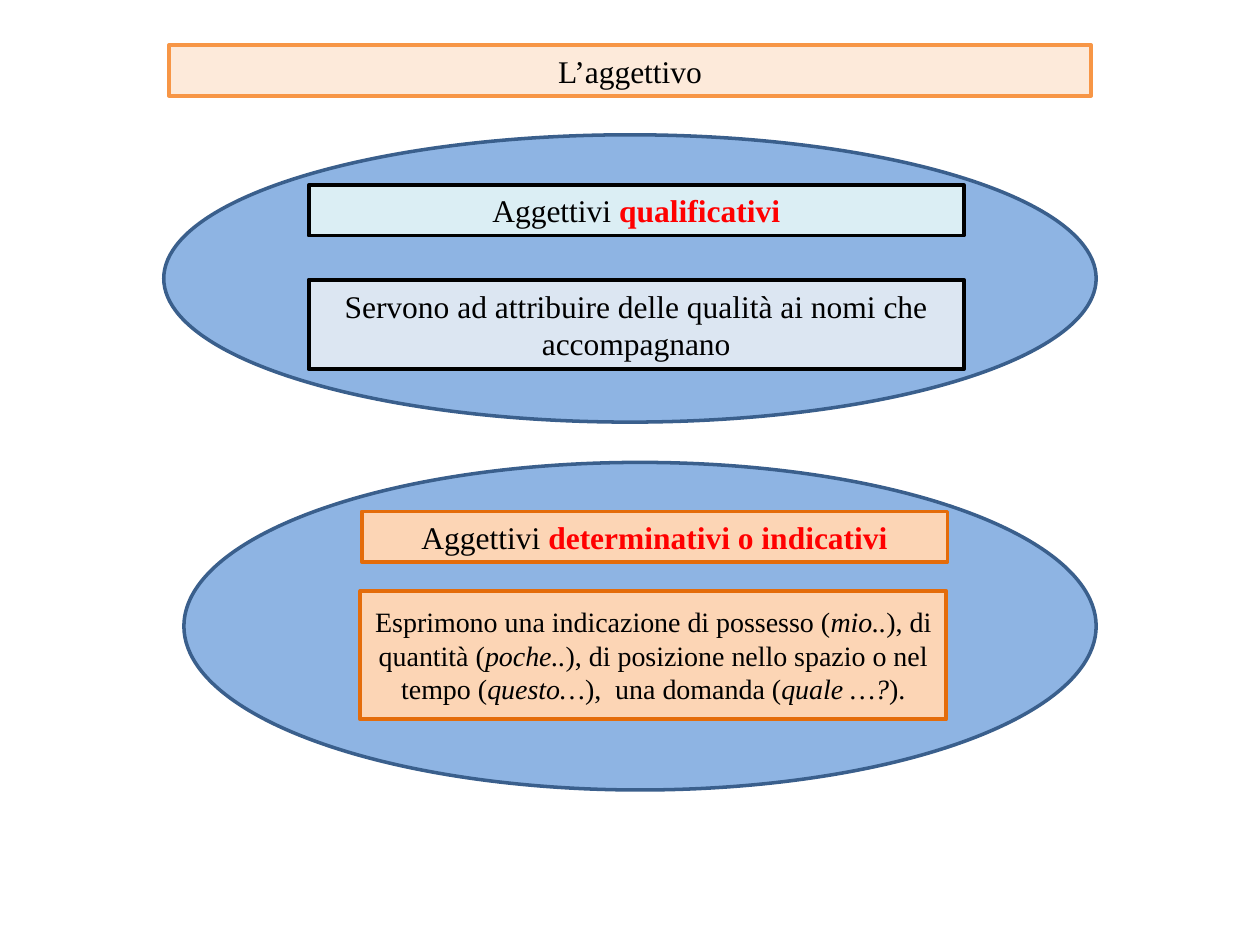
import pptx
import pptx.dml.color
import pptx.enum.shapes
import pptx.enum.text
import pptx.util

RGBColor = pptx.dml.color.RGBColor
SHAPE = pptx.enum.shapes.MSO_SHAPE

BLACK = RGBColor(0x00, 0x00, 0x00)
RED = RGBColor(0xFF, 0x00, 0x00)
BLUE = RGBColor(0x8E, 0xB4, 0xE3)
DARK_BLUE = RGBColor(0x3A, 0x5F, 0x8C)
PALE_BLUE = RGBColor(0xDC, 0xE6, 0xF2)
PALE_AQUA = RGBColor(0xDB, 0xEE, 0xF4)
CREAM = RGBColor(0xFD, 0xEA, 0xDA)
PEACH = RGBColor(0xFC, 0xD5, 0xB5)
ORANGE = RGBColor(0xF7, 0x96, 0x46)
DARK_ORANGE = RGBColor(0xE4, 0x6C, 0x0A)

FONT = "Times New Roman"
COLS, ROWS = 100, 75
PLAIN, KEY, EXAMPLE = "plain", "key", "example"


def add_figure(prs, s, kind, box, fill, line, width):
    """Draw a filled, outlined shape in a box of grid columns and rows."""
    col, row = prs.slide_width / COLS, prs.slide_height / ROWS
    x, y, w, h = box
    sp = s.shapes.add_shape(kind, round(x * col), round(y * row),
                            round(w * col), round(h * row))
    sp.shadow.inherit = False
    sp.fill.solid()
    sp.fill.fore_color.rgb = fill
    sp.line.color.rgb = line
    sp.line.width = pptx.util.Pt(width)
    return sp


def add_label(prs, s, box, fill, line, runs, size=18):
    """Draw a rectangle with centred text made of (text, style) runs."""
    sp = add_figure(prs, s, SHAPE.RECTANGLE, box, fill, line, 2.25)
    tf = sp.text_frame
    tf.word_wrap = True
    tf.vertical_anchor = pptx.enum.text.MSO_ANCHOR.MIDDLE
    p = tf.paragraphs[0]
    p.alignment = pptx.enum.text.PP_ALIGN.CENTER
    for text, style in runs:
        r = p.add_run()
        r.text = text
        r.font.name = FONT
        r.font.size = pptx.util.Pt(size)
        r.font.bold = style == KEY
        r.font.italic = style == EXAMPLE
        r.font.color.rgb = RED if style == KEY else BLACK


def add_group(prs, s, box, line, heading, body):
    """Draw an ellipse with a heading and a body label offset from its corner."""
    add_figure(prs, s, SHAPE.OVAL, box, BLUE, DARK_BLUE, 2)
    for (dx, dy, w, h), fill, runs, size in (heading, body):
        add_label(prs, s, (box[0] + dx, box[1] + dy, w, h), fill, line, runs, size)


def main():
    """Build the slide and save it."""
    prs = pptx.Presentation()
    prs.slide_width = pptx.util.Inches(10)
    prs.slide_height = pptx.util.Inches(7.5)
    s = prs.slides.add_slide(prs.slide_layouts[6])

    add_label(prs, s, (13.4, 3.6, 73.2, 4), CREAM, ORANGE, [("L’aggettivo", PLAIN)])
    add_group(
        prs, s, (13, 10.7, 74, 22.8), BLACK,
        ((11.5, 4, 52, 4), PALE_AQUA,
         [("Aggettivi ", PLAIN), ("qualificativi", KEY)], 18),
        ((11.5, 11.5, 52, 7.1), PALE_BLUE,
         [("Servono ad attribuire delle qualità ai nomi che accompagnano", PLAIN)], 18))
    add_group(
        prs, s, (14.6, 36.7, 72.4, 26), DARK_ORANGE,
        ((14.1, 3.9, 46.5, 4), PEACH,
         [("Aggettivi ", PLAIN), ("determinativi o indicativi", KEY)], 18),
        ((14, 10.2, 46.5, 10.2), PEACH,
         [("Esprimono una indicazione di possesso (", PLAIN), ("mio..", EXAMPLE),
          ("), di quantità (", PLAIN), ("poche..", EXAMPLE),
          ("), di posizione nello spazio o nel tempo (", PLAIN), ("questo…", EXAMPLE),
          ("),  una domanda (", PLAIN), ("quale …?", EXAMPLE), (").", PLAIN)], 16))
    prs.save("out.pptx")


if __name__ == "__main__":
    main()
